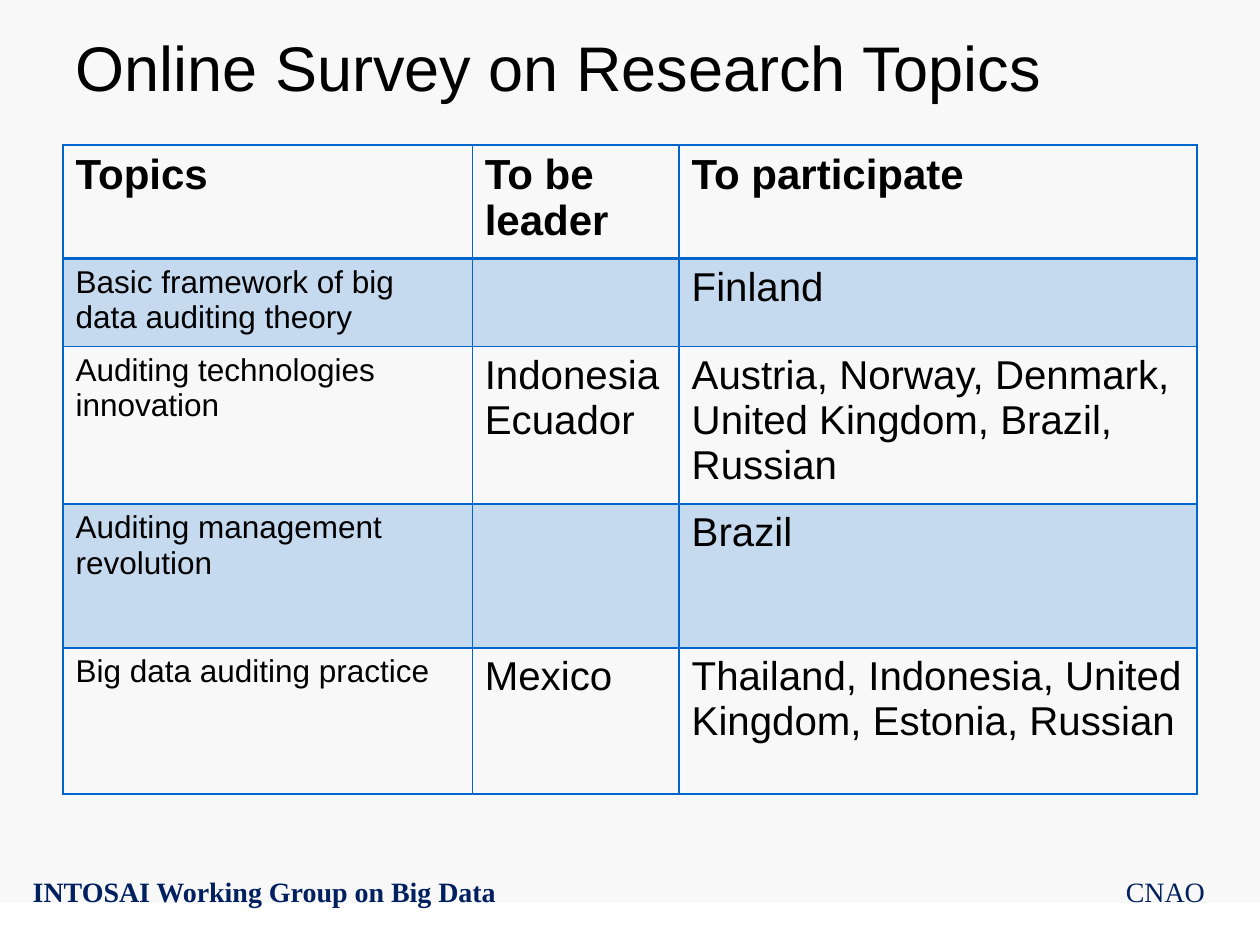
from lxml.etree import SubElement
from pptx import Presentation
from pptx.dml.color import RGBColor
from pptx.enum.shapes import MSO_SHAPE
from pptx.enum.text import MSO_ANCHOR, PP_ALIGN
from pptx.oxml import parse_xml
from pptx.oxml.ns import nsdecls, qn
from pptx.util import Cm, Pt

BLACK = RGBColor(0x00, 0x00, 0x00)
NAVY = RGBColor(0x00, 0x20, 0x60)
BLUE = RGBColor(0x00, 0x66, 0xCC)
GREY_TOP = RGBColor(0xF8, 0xF8, 0xF8)
GREY_BOTTOM = RGBColor(0xFB, 0xFB, 0xFB)

# Content
TITLE = "Online Survey on Research Topics"
ROWS = [
    ("Topics", "To be leader", "To participate"),
    ("Basic framework of big data auditing theory", "", "Finland"),
    ("Auditing technologies innovation", "Indonesia Ecuador",
     "Austria, Norway, Denmark, United Kingdom, Brazil, Russian"),
    ("Auditing management revolution", "", "Brazil"),
    ("Big data auditing practice", "Mexico",
     "Thailand, Indonesia, United Kingdom, Estonia, Russian"),
]
COLUMN_WIDTHS = [8.25, 4.17, 10.44]
ROW_HEIGHTS = [2.08, 1.66, 2.9, 2.9, 2.95]
# Text, left, width, bold, alignment
FOOTERS = [
    ("INTOSAI Working Group on Big Data", 0.41, 9.96, True, PP_ALIGN.LEFT),
    ("CNAO", 18.62, 5.92, False, PP_ALIGN.RIGHT),
]


def format_text(para, name, size, color, bold=False):
    para.font.name = name
    para.font.size = Pt(size)
    para.font.color.rgb = color
    para.font.bold = bold


def set_borders(cell, widths):
    """Draw the left, right, top and bottom lines, given in points."""
    properties = cell._tc.get_or_add_tcPr()
    for index, (side, width) in enumerate(zip("LRTB", widths)):
        properties.insert(index, parse_xml(
            f'<a:ln{side} {nsdecls("a")} w="{Pt(width)}"><a:solidFill>'
            f'<a:srgbClr val="{BLUE}"/></a:solidFill></a:ln{side}>'))


def tint_cell(cell):
    cell.fill.solid()
    cell.fill.fore_color.rgb = BLUE
    color = cell._tc.tcPr.find(".//" + qn("a:srgbClr"))
    SubElement(color, qn("a:alpha"), val="20000")


deck = Presentation()
deck.slide_width, deck.slide_height = Cm(25.4), Cm(19.05)
page = deck.slides.add_slide(deck.slide_layouts[5])

# Title
title = page.shapes.title
title.left, title.top, title.width, title.height = Cm(1.27), Cm(0.53), Cm(22.86), Cm(1.63)
title.text_frame.text = TITLE
title.text_frame.vertical_anchor = MSO_ANCHOR.MIDDLE
title_para = title.text_frame.paragraphs[0]
title_para.alignment = PP_ALIGN.LEFT
format_text(title_para, "Arial", 36, BLACK)

# Shaded backdrop, behind the title
backdrop = page.shapes.add_shape(MSO_SHAPE.RECTANGLE, 0, 0, deck.slide_width, Cm(18.2))
backdrop.shadow.inherit = False
backdrop.line.fill.background()
backdrop.fill.gradient()
backdrop.fill.gradient_angle = 270
for stop, color in zip(backdrop.fill.gradient_stops, (GREY_TOP, GREY_BOTTOM)):
    stop.color.rgb = color
title.element.addprevious(backdrop.element)

# Footer
for text, left, width, bold, alignment in FOOTERS:
    box = page.shapes.add_textbox(Cm(left), Cm(17.5), Cm(width), Cm(1.03))
    box.text_frame.word_wrap = True
    box.text_frame.text = text
    para = box.text_frame.paragraphs[0]
    para.alignment = alignment
    format_text(para, "Times New Roman", 16, NAVY, bold)

# Survey table
table = page.shapes.add_table(
    len(ROWS), len(COLUMN_WIDTHS), Cm(1.27), Cm(2.92),
    Cm(sum(COLUMN_WIDTHS)), Cm(sum(ROW_HEIGHTS))).table
table.first_row = table.horz_banding = False
for column, width in zip(table.columns, COLUMN_WIDTHS):
    column.width = Cm(width)
for row, height in zip(table.rows, ROW_HEIGHTS):
    row.height = Cm(height)

for row_index, texts in enumerate(ROWS):
    is_header = row_index == 0
    for column_index, text in enumerate(texts):
        cell = table.cell(row_index, column_index)
        cell.text = text
        size = 24 if is_header else 18 if column_index == 0 else 23
        format_text(cell.text_frame.paragraphs[0], "Arial", size, BLACK, is_header)
        if row_index % 2:
            tint_cell(cell)
        else:
            cell.fill.background()
        set_borders(cell, (1, 1, 2 if row_index == 1 else 1, 2 if is_header else 1))

deck.save("out.pptx")
